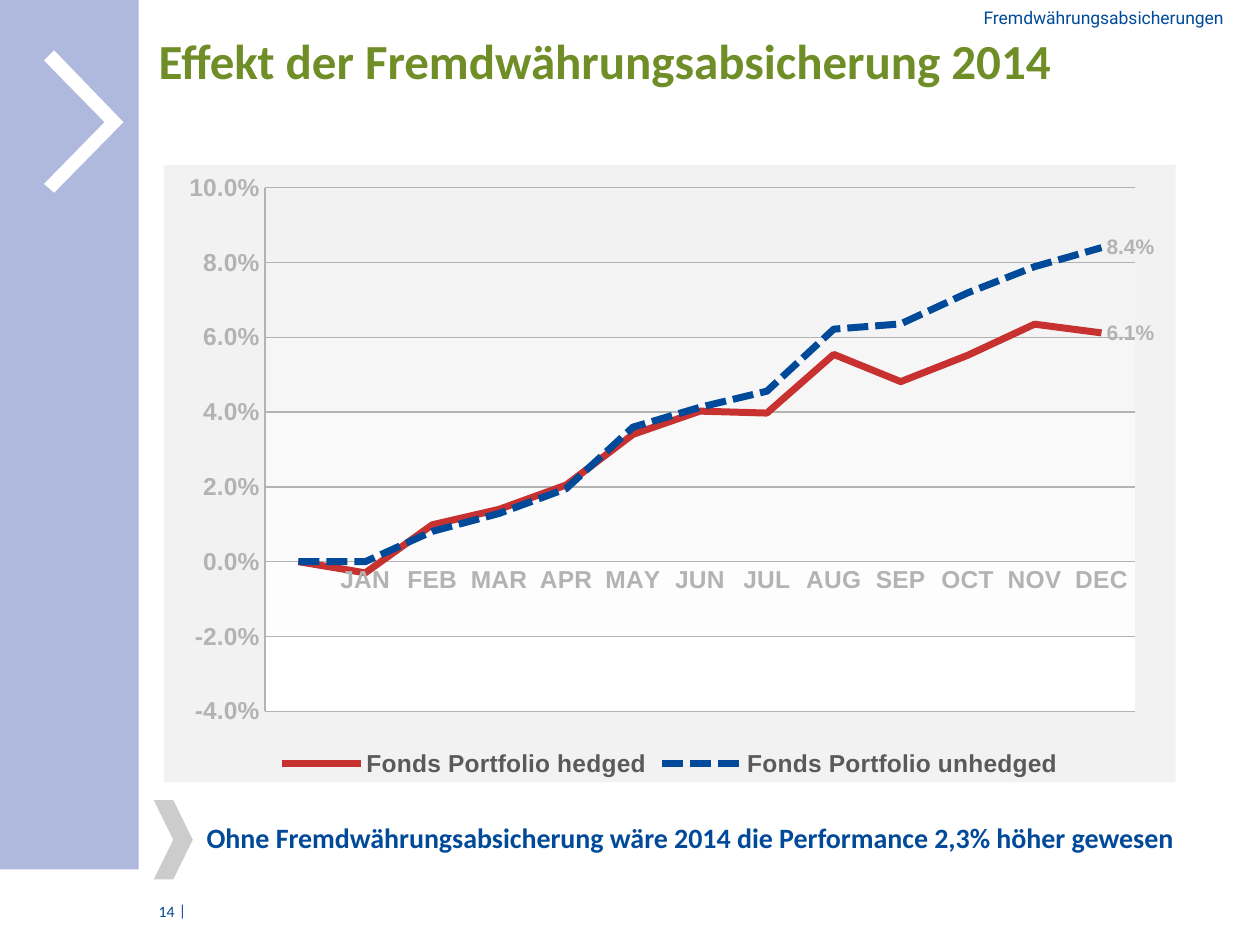
"""Build the slide on the effect of currency hedging in 2014."""
from lxml import etree
from pptx import Presentation
from pptx.chart.data import CategoryChartData
from pptx.dml.color import RGBColor
from pptx.enum.chart import XL_CHART_TYPE as ChartType, XL_LABEL_POSITION as LabelPosition
from pptx.enum.chart import XL_LEGEND_POSITION as LegendPosition, XL_TICK_MARK as TickMark
from pptx.enum.dml import MSO_LINE as Dash
from pptx.enum.shapes import MSO_SHAPE as Shape
from pptx.enum.text import MSO_ANCHOR as Anchor, PP_ALIGN as Align
from pptx.oxml import parse_xml
from pptx.util import Inches, Pt

COLORS = {
    "band": "AEB9DD", "white": "FFFFFF", "blue": "004A99", "green": "708E27",
    "chevron": "CCCCCC", "axis": "B3B3B3", "legend": "5A5A5A", "panel": "F2F2F2",
    "red": "C73231",
}
C = {name: RGBColor.from_string(value) for name, value in COLORS.items()}
NAMESPACES = ('xmlns:c="http://schemas.openxmlformats.org/drawingml/2006/chart" '
              'xmlns:a="http://schemas.openxmlformats.org/drawingml/2006/main"')

presentation = Presentation()
presentation.slide_width, presentation.slide_height = Inches(10), Inches(7.5)
column = presentation.slide_width / 100
row = presentation.slide_height / 75
slide = presentation.slides.add_slide(presentation.slide_layouts[5])
shapes = slide.shapes


def grid(left, top, width, height):
    return int(left * column), int(top * row), int(width * column), int(height * row)


def write(shape, text, size, color, bold=False, font="Calibri", align=Align.LEFT,
          anchor=Anchor.TOP, wrap=True):
    frame = shape.text_frame
    frame.text = text
    frame.word_wrap = wrap
    frame.vertical_anchor = anchor
    frame.margin_left = frame.margin_right = frame.margin_top = frame.margin_bottom = 0
    paragraph = frame.paragraphs[0]
    paragraph.alignment = align
    run_font = paragraph.runs[0].font
    run_font.size, run_font.name, run_font.bold = Pt(size), font, bold
    run_font.color.rgb = C[color]


band = shapes.add_shape(Shape.RECTANGLE, *grid(0, 0, 11, 69))
builder = shapes.build_freeform(43, 40, scale=column / 10)
builder.add_line_segments([(35, 48), (83, 97), (35, 146), (43, 153), (98, 97)])
arrow = builder.convert_to_shape()
chevron = shapes.add_shape(Shape.CHEVRON, *grid(12.2, 63.5, 3.1, 6.3))
for shape, color in ((band, "band"), (arrow, "white"), (chevron, "chevron")):
    shape.shadow.inherit = False
    shape.fill.solid()
    shape.fill.fore_color.rgb = C[color]
    shape.line.fill.background()

title = shapes.title
title.left, title.top, title.width, title.height = grid(12.6, 2.4, 84.7, 9.2)
write(title, "Effekt der Fremdwährungsabsicherung 2014", 28, "green", bold=True)
write(shapes.add_textbox(*grid(12.6, 71.6, 1.6, 1.9)), "14", 9, "blue", wrap=False)
write(shapes.add_textbox(*grid(14.2, 71.5, 1.1, 2.1)), "|", 9, "blue")
write(shapes.add_textbox(*grid(74.4, 0.8, 22.7, 1.4)), "Fremdwährungsabsicherungen", 10,
      "blue", font="Roboto", align=Align.RIGHT, anchor=Anchor.BOTTOM)
write(shapes.add_textbox(*grid(16.4, 65.1, 79.8, 2.7)),
      "Ohne Fremdwährungsabsicherung wäre 2014 die Performance 2,3% höher gewesen",
      16, "blue", bold=True)

data = CategoryChartData(number_format="0.0%")
data.categories = ["", "JAN", "FEB", "MAR", "APR", "MAY", "JUN", "JUL", "AUG", "SEP",
                   "OCT", "NOV", "DEC"]
data.add_series("Fonds Portfolio hedged", [
    0, -0.003, 0.009861, 0.014002, 0.020491, 0.034064, 0.040268, 0.039748, 0.055448,
    0.048166, 0.055188, 0.063524, 0.061185])
data.add_series("Fonds Portfolio unhedged", [
    0, 0, 0.0081, 0.0129, 0.0195, 0.036, 0.0413, 0.0456, 0.0622, 0.0636, 0.0719,
    0.0789, 0.084])
chart = shapes.add_chart(ChartType.LINE, *grid(13, 13.1, 80.3, 49), data).chart
chart.has_title = False
chart.font.name, chart.font.size, chart.font.bold = "Arial", Pt(14), True
chart.font.color.rgb = C["axis"]
chart.has_legend = True
chart.legend.position = LegendPosition.BOTTOM
chart.legend.include_in_layout = False
chart.legend.font.size = Pt(14)
chart.legend.font.color.rgb = C["legend"]

values = chart.value_axis
values.minimum_scale, values.maximum_scale, values.major_unit = -0.04, 0.1, 0.02
values.tick_labels.number_format = "0.0%"
values.tick_labels.number_format_is_linked = False
values.has_major_gridlines = True
for axis in (values, chart.category_axis):
    axis.major_tick_mark = axis.minor_tick_mark = TickMark.NONE
for line in (values.format.line, values.major_gridlines.format.line,
             chart.category_axis.format.line):
    line.color.rgb = C["axis"]
    line.width = Pt(0.75)

plot = chart.plots[0]
plot.vary_by_categories = False
for series, color, dash in zip(plot.series, ("red", "blue"), (Dash.SOLID, Dash.SQUARE_DOT)):
    series.smooth = False
    series.format.line.color.rgb = C[color]
    series.format.line.width = Pt(4)
    series.format.line.dash_style = dash
    series.data_labels.show_value = False
    label = series.points[12].data_label
    label.position = LabelPosition.RIGHT
    label.font.size, label.font.bold = Pt(12), True
    label.font.color.rgb = C["axis"]

chart_space = chart.element
plot_area = chart_space.find(".//{*}plotArea")
for layout in plot_area.findall("{*}layout"):
    plot_area.remove(layout)
layout = parse_xml(f'<c:layout {NAMESPACES}><c:manualLayout/></c:layout>')
for tag, value in (("layoutTarget", "inner"), ("xMode", "edge"), ("yMode", "edge"),
                   ("x", "0.1"), ("y", "0.037"), ("w", "0.86"), ("h", "0.848")):
    etree.SubElement(layout[0], f"{{{layout.nsmap['c']}}}{tag}", val=value)
plot_area.insert(0, layout)
plot_area.append(parse_xml(
    f'<c:spPr {NAMESPACES}><a:gradFill><a:gsLst>'
    f'<a:gs pos="0"><a:srgbClr val="{COLORS["panel"]}"/></a:gs>'
    f'<a:gs pos="100000"><a:srgbClr val="{COLORS["white"]}"/></a:gs>'
    '</a:gsLst><a:lin ang="5400000" scaled="0"/></a:gradFill></c:spPr>'))
chart_space.find("{*}chart").addnext(parse_xml(
    f'<c:spPr {NAMESPACES}><a:solidFill><a:srgbClr val="{COLORS["panel"]}"/></a:solidFill>'
    '<a:ln><a:noFill/></a:ln></c:spPr>'))

presentation.save("out.pptx")
